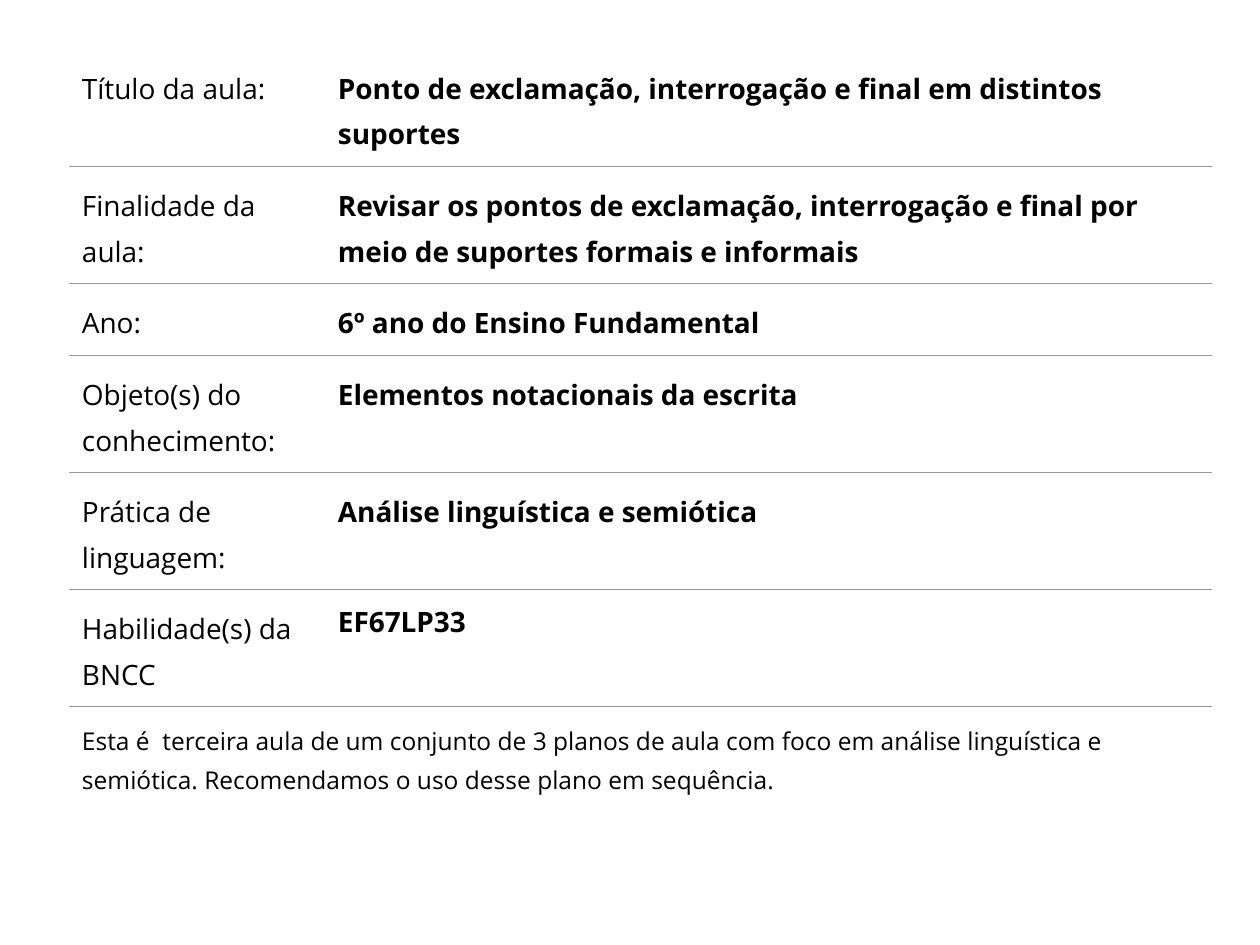
from lxml.etree import SubElement
from pptx import Presentation
from pptx.dml.color import RGBColor
from pptx.oxml.ns import qn
from pptx.util import Emu, Pt

EMU_PER_PX = 914400 / 126
FONT = "Open Sans"
COLORS = {"text": "000000", "rule": "999999", "paper": "FFFFFF"}
COLUMN_WIDTHS = [256, 281, 282, 324]
ROW_HEIGHT = 53
CELL_MARGIN = 13
LESSON_DETAILS = [
    ("Título da aula:", "Ponto de exclamação, interrogação e final em distintos suportes"),
    ("Finalidade da aula:", "Revisar os pontos de exclamação, interrogação e final por meio de suportes formais e informais"),
    ("Ano:", "6º ano do Ensino Fundamental"),
    ("Objeto(s) do conhecimento:", "Elementos notacionais da escrita"),
    ("Prática de linguagem:", "Análise linguística e semiótica"),
    ("Habilidade(s) da BNCC", "EF67LP33"),
]
SEQUENCE_NOTE = (
    "Esta é  terceira aula de um conjunto de 3 planos de aula com foco em "
    "análise linguística e semiótica. Recomendamos o uso desse plano em sequência."
)


def px(length):
    return Emu(round(length * EMU_PER_PX))


def set_borders(cell, top, bottom):
    properties = cell._tc.get_or_add_tcPr()
    sides = {"a:lnL": None, "a:lnR": None, "a:lnT": top, "a:lnB": bottom}
    for position, (side, color) in enumerate(sides.items()):
        border = SubElement(properties, qn(side), w=str(Pt(0.75)))
        if color:
            fill = SubElement(border, qn("a:solidFill"))
            SubElement(fill, qn("a:srgbClr"), val=COLORS[color])
        else:
            SubElement(border, qn("a:noFill"))
        properties.insert(position, border)


def write_cell(cell, text, size=16, bold=False, line_spacing=1.2, gap=3):
    cell.text_frame.text = text
    paragraph = cell.text_frame.paragraphs[0]
    paragraph.line_spacing = line_spacing
    paragraph.space_before = paragraph.space_after = Pt(gap)
    font = paragraph.runs[0].font
    font.name = FONT
    font.size = Pt(size)
    font.bold = bold
    font.color.rgb = RGBColor.from_string(COLORS["text"])


def format_grid(table):
    table.first_row = False
    table.horz_banding = False
    for column, width in zip(table.columns, COLUMN_WIDTHS):
        column.width = px(width)
    last = len(table.rows) - 1
    for index, row in enumerate(table.rows):
        row.height = px(ROW_HEIGHT)
        for cell in row.cells:
            cell.margin_left = cell.margin_right = px(CELL_MARGIN)
            cell.margin_top = cell.margin_bottom = px(CELL_MARGIN)
            cell.fill.background()
            set_borders(
                cell,
                top="rule" if index else None,
                bottom="paper" if index == last else "rule",
            )


def add_lesson_table(slide):
    row_count = len(LESSON_DETAILS) + 1
    table = slide.shapes.add_table(
        row_count, len(COLUMN_WIDTHS), px(69), px(49),
        px(sum(COLUMN_WIDTHS)), px(ROW_HEIGHT * row_count),
    ).table
    format_grid(table)
    last_column = len(COLUMN_WIDTHS) - 1
    for index, (label, detail) in enumerate(LESSON_DETAILS):
        table.cell(index, 1).merge(table.cell(index, last_column))
        write_cell(table.cell(index, 0), label)
        is_skill = index == len(LESSON_DETAILS) - 1
        spacing = {"line_spacing": 1.0, "gap": 0} if is_skill else {}
        write_cell(table.cell(index, 1), detail, bold=True, **spacing)
    note_row = row_count - 1
    table.cell(note_row, 0).merge(table.cell(note_row, last_column))
    write_cell(table.cell(note_row, 0), SEQUENCE_NOTE, size=14, line_spacing=1.15, gap=0)


def main():
    presentation = Presentation()
    presentation.slide_width = px(1260)
    presentation.slide_height = px(945)
    slide = presentation.slides.add_slide(presentation.slide_layouts[6])
    slide.background.fill.solid()
    slide.background.fill.fore_color.rgb = RGBColor.from_string(COLORS["paper"])
    add_lesson_table(slide)
    presentation.save("out.pptx")


if __name__ == "__main__":
    main()
